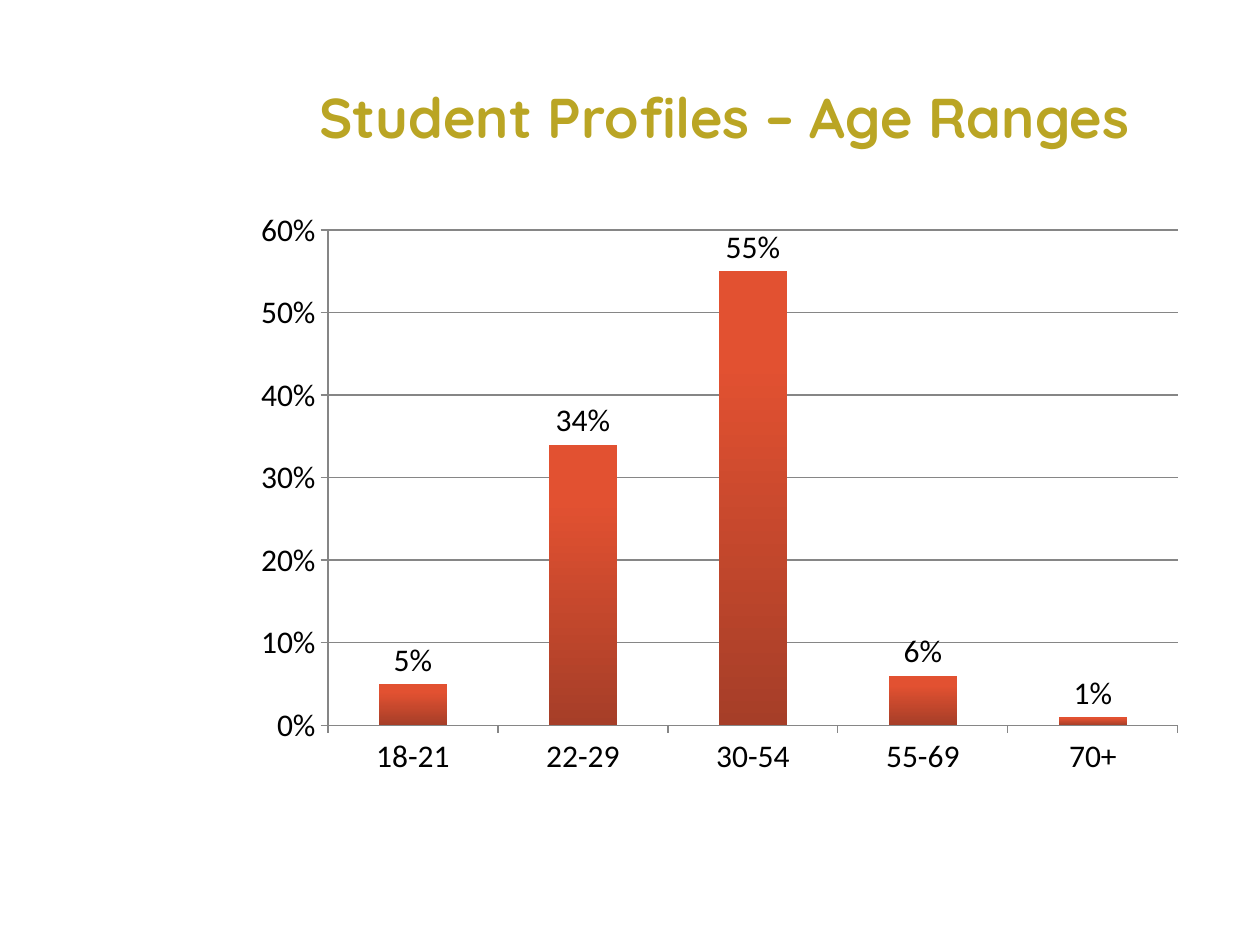
from pptx import Presentation
from pptx.chart.data import CategoryChartData
from pptx.dml.color import RGBColor
from pptx.enum.chart import XL_CHART_TYPE, XL_LABEL_POSITION, XL_TICK_MARK
from pptx.enum.text import MSO_ANCHOR, PP_ALIGN
from pptx.util import Inches, Pt

COLUMN = XL_CHART_TYPE.COLUMN_CLUSTERED
OUTSIDE_END = XL_LABEL_POSITION.OUTSIDE_END
TICK_OUTSIDE = XL_TICK_MARK.OUTSIDE
TICK_NONE = XL_TICK_MARK.NONE
MIDDLE = MSO_ANCHOR.MIDDLE
CENTER = PP_ALIGN.CENTER


def color(value):
    return RGBColor.from_string(value)


def format_text(text_frame, text, font, size, fill, bold=False, align=CENTER):
    text_frame.text = text
    text_frame.word_wrap = True
    text_frame.vertical_anchor = MIDDLE
    paragraph = text_frame.paragraphs[0]
    paragraph.alignment = align
    run = paragraph.runs[0]
    run.font.name = font
    run.font.size = Pt(size)
    run.font.bold = bold
    run.font.color.rgb = color(fill)


presentation = Presentation()
presentation.slide_width = Inches(10)
presentation.slide_height = Inches(7.5)
slide = presentation.slides.add_slide(presentation.slide_layouts[5])
slide.background.fill.solid()
slide.background.fill.fore_color.rgb = color("FFFFFF")

title = slide.shapes.title
title.left, title.top = Inches(1.75), Inches(0.3)
title.width, title.height = Inches(8), Inches(1.25)
format_text(title.text_frame, "Student Profiles – Age Ranges",
            font="Quicksand", size=32, fill="BAA524", bold=True)

age_data = CategoryChartData(number_format="0%")
age_data.categories = ["18-21", "22-29", "30-54", "55-69", "70+"]
age_data.add_series("Series 1", [0.05, 0.34, 0.55, 0.06, 0.01])
chart = slide.shapes.add_chart(COLUMN, Inches(1.92), Inches(1.58),
                               Inches(7.58), Inches(4.67), age_data).chart
chart.has_legend = False
chart.has_title = False
chart.font.name = "Calibri"
chart.font.size = Pt(18)
chart.font.color.rgb = color("000000")

value_axis = chart.value_axis
value_axis.minimum_scale = 0
value_axis.maximum_scale = 0.6
value_axis.major_unit = 0.1
value_axis.has_major_gridlines = True
value_axis.tick_labels.number_format = "0%"
value_axis.tick_labels.number_format_is_linked = False
for axis in (chart.category_axis, value_axis):
    axis.major_tick_mark = TICK_OUTSIDE
    axis.minor_tick_mark = TICK_NONE
    axis.tick_labels.font.size = Pt(18)
for line in (chart.category_axis.format.line, value_axis.format.line,
             value_axis.major_gridlines.format.line):
    line.color.rgb = color("868686")
    line.width = Pt(0.75)

plot = chart.plots[0]
plot.gap_width = 150
plot.vary_by_categories = False
plot.has_data_labels = True
labels = plot.data_labels
labels.show_value = True
labels.number_format = "0%"
labels.number_format_is_linked = False
labels.position = OUTSIDE_END
labels.font.size = Pt(18)

bar_fill = plot.series[0].format.fill
bar_fill.gradient()
bar_fill.gradient_angle = 90
for stop, position, shade in zip(bar_fill.gradient_stops, (0, 0.8), ("A63E28", "E25131")):
    stop.position = position
    stop.color.rgb = color(shade)

presentation.save("out.pptx")
